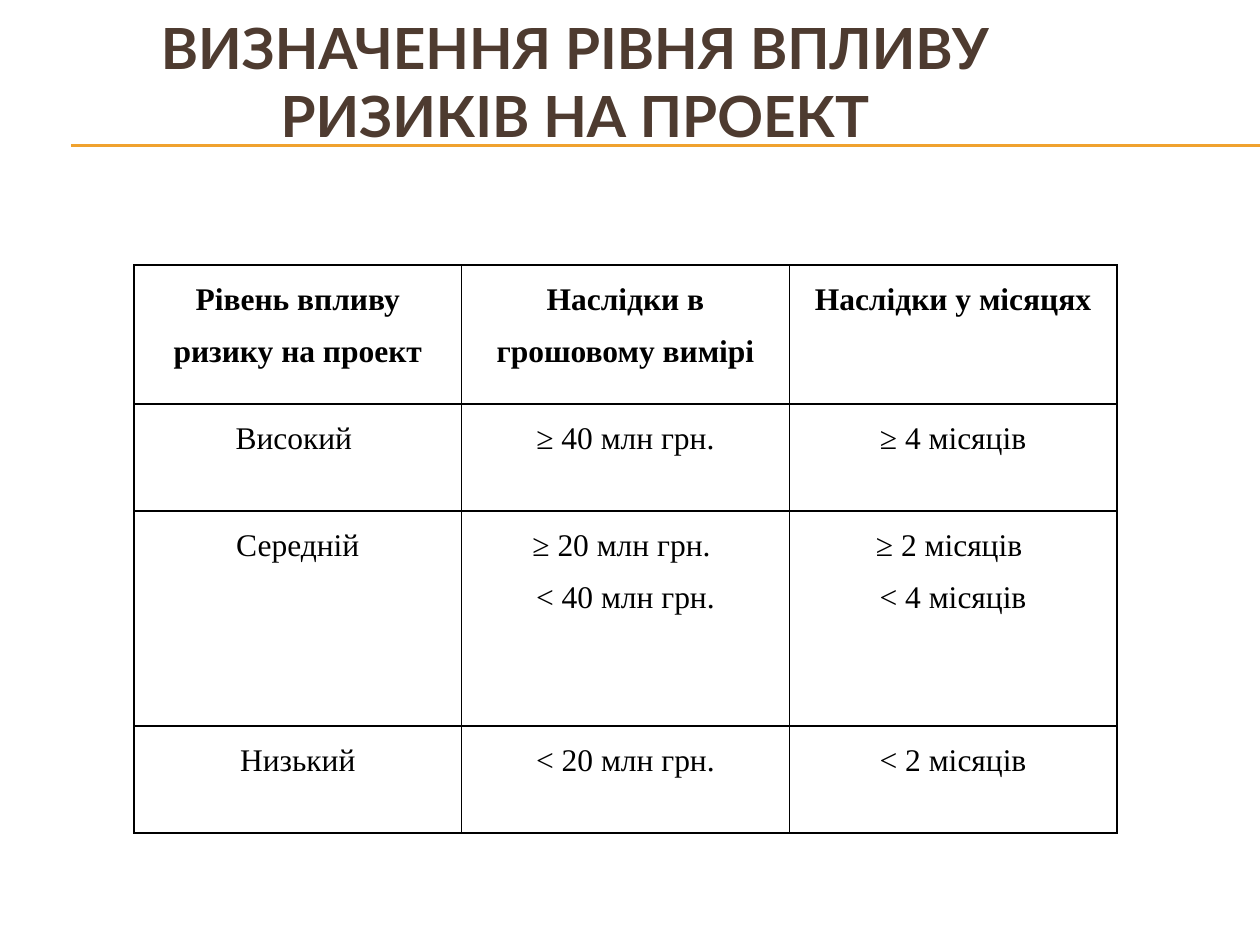
from lxml import etree
from pptx import Presentation
from pptx import util as u
from pptx.dml import color
from pptx.enum import shapes, text
from pptx.oxml import ns

PX = u.Inches(1) / 126
COLORS = {"title": "4E3B30", "rule": "F0A22E", "ink": "000000"}
ROWS = [
    ["Рівень впливу ризику на проект", "Наслідки в грошовому вимірі", "Наслідки у місяцях"],
    ["Високий ", "≥ 40 млн грн.", "≥ 4 місяців"],
    ["Середній", "≥ 20 млн грн. \n< 40 млн грн.", "≥ 2 місяців \n< 4 місяців"],
    ["Низький", "< 20 млн грн.", "< 2 місяців"],
]
ROW_HEIGHTS = [139, 107, 215, 107]


def px(length):
    """Turn px into EMU."""
    return u.Emu(round(length * PX))


def rgb(name):
    """Return the named colour."""
    return color.RGBColor.from_string(COLORS[name])


def style_paragraph(paragraph, font_name, size, color_name, bold):
    """Centre a paragraph and format its runs."""
    paragraph.alignment = text.PP_ALIGN.CENTER
    for run in paragraph.runs:
        run.font.name = font_name
        run.font.size = u.Pt(size)
        run.font.bold = bold
        run.font.color.rgb = rgb(color_name)


def add_rules(slide, left, top, width):
    """Draw the double rule under the title."""
    for y in (top, top + 1):
        rule = slide.shapes.add_connector(
            shapes.MSO_CONNECTOR.STRAIGHT, px(left), px(y), px(left + width), px(y))
        rule.line.color.rgb = rgb("rule")
        rule.line.width = u.Pt(0.75)
        etree.SubElement(rule._element.spPr, ns.qn("a:effectLst"))


def set_title(slide, left, top, width, height):
    """Fill the title placeholder, its text raised above the rule."""
    title = slide.shapes.title
    title.left, title.top, title.width, title.height = map(px, (left, top, width, height))
    frame = title.text_frame
    frame.text = "ВИЗНАЧЕННЯ РІВНЯ ВПЛИВУ РИЗИКІВ НА ПРОЕКТ"
    frame.word_wrap = True
    frame.auto_size = text.MSO_AUTO_SIZE.NONE
    frame.vertical_anchor = text.MSO_ANCHOR.MIDDLE
    frame.margin_top, frame.margin_bottom = px(6), px(70)
    style_paragraph(frame.paragraphs[0], "Lato", 32.4, "title", True)


def set_borders(cell):
    """Give a cell a thin line on every side."""
    properties = cell._tc.get_or_add_tcPr()
    for side in ("lnL", "lnR", "lnT", "lnB"):
        line = etree.SubElement(properties, ns.qn(f"a:{side}"), w=str(u.Pt(1)))
        fill = etree.SubElement(line, ns.qn("a:solidFill"))
        etree.SubElement(fill, ns.qn("a:srgbClr"), val=COLORS["ink"])


def add_impact_table(slide, left, top, width):
    """Build the table of risk impact levels."""
    columns = len(ROWS[0])
    table = slide.shapes.add_table(
        len(ROWS), columns, px(left), px(top), px(width), px(sum(ROW_HEIGHTS))).table
    table.first_row = table.horz_banding = False
    for column in table.columns:
        column.width = px(width / columns)
    for row_index, (values, height) in enumerate(zip(ROWS, ROW_HEIGHTS)):
        table.rows[row_index].height = px(height)
        for column_index, value in enumerate(values):
            cell = table.cell(row_index, column_index)
            cell.text_frame.text = value
            cell.margin_left = cell.margin_right = px(9)
            cell.margin_top = cell.margin_bottom = 0
            set_borders(cell)
            cell.fill.background()
            for paragraph in cell.text_frame.paragraphs:
                paragraph.line_spacing = 1.5
                style_paragraph(paragraph, "Times New Roman", 18, "ink", row_index == 0)


def main():
    """Build and save the slide."""
    presentation = Presentation()
    presentation.slide_width, presentation.slide_height = px(1260), px(945)
    slide = presentation.slides.add_slide(presentation.slide_layouts[5])
    add_rules(slide, 71, 145, 1189)
    set_title(slide, 44, 55, 1062, 116)
    add_impact_table(slide, 134, 265, 983)
    presentation.save("out.pptx")


if __name__ == "__main__":
    main()
